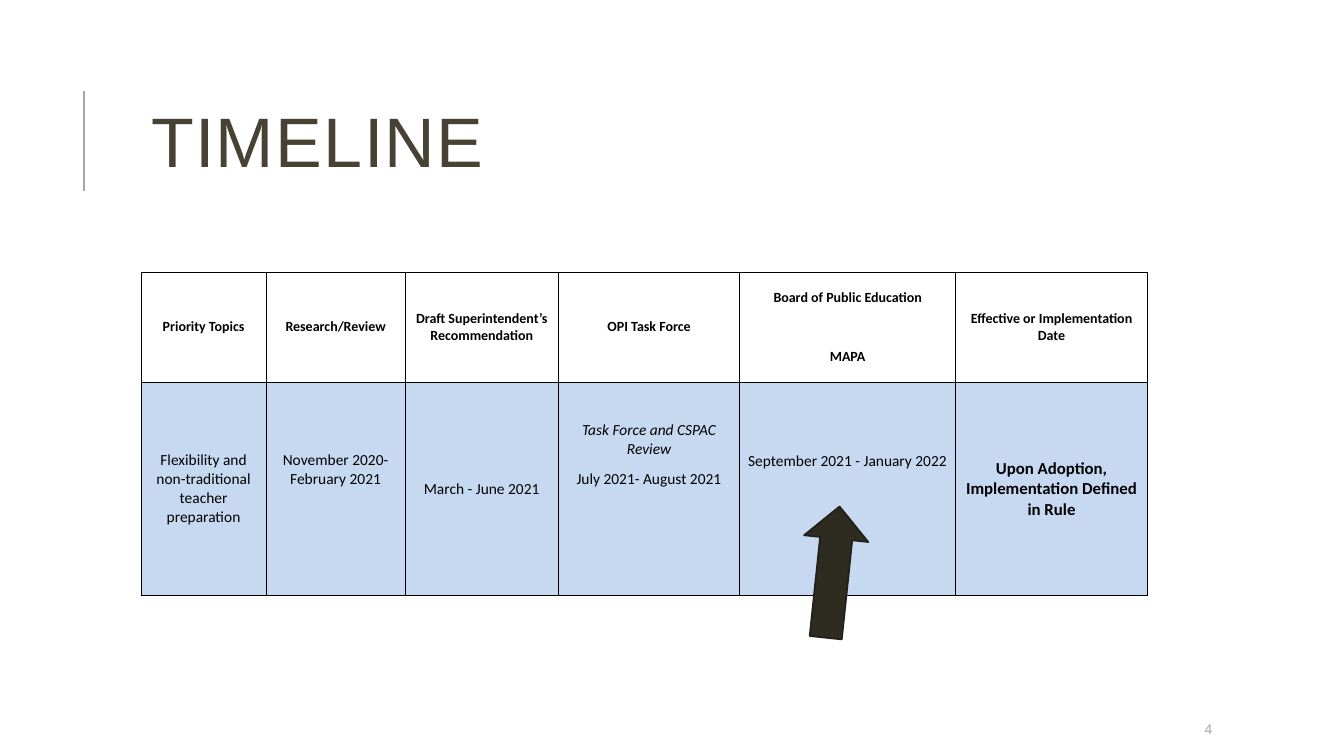
from dataclasses import dataclass

from lxml.etree import SubElement
from pptx import Presentation
from pptx.dml.color import RGBColor
from pptx.enum.shapes import MSO_CONNECTOR as Connector, MSO_SHAPE as Preset
from pptx.enum.text import MSO_ANCHOR as Anchor, PP_ALIGN as Align
from pptx.oxml import parse_xml
from pptx.oxml.ns import nsdecls, qn
from pptx.util import Inches, Pt


@dataclass(frozen=True)
class Theme:
    heading_font: str = "Arial"
    table_font: str = "Calibri"
    title_color: str = "474233"
    muted: str = "A6A6A6"
    ink: str = "000000"
    band: str = "C6D9F1"
    arrow: str = "2E2B21"
    arrow_line: str = "222018"
    title_size: float = 50
    number_size: float = 10
    header_size: float = 10
    body_size: float = 11
    outcome_size: float = 12


class SlideBuilder:
    """Places elements on a grid of 100 columns by 100 rows."""

    def __init__(self, presentation, theme):
        self.theme = theme
        self.column = presentation.slide_width / 100
        self.row = presentation.slide_height / 100
        self.slide = presentation.slides.add_slide(presentation.slide_layouts[6])

    def x(self, columns):
        return round(columns * self.column)

    def y(self, rows):
        return round(rows * self.row)

    def box(self, left, top, width, height):
        return self.x(left), self.y(top), self.x(width), self.y(height)

    def style(self, paragraph, font, size, color, bold=False, italic=False):
        paragraph.font.name = font
        paragraph.font.size = Pt(size)
        paragraph.font.color.rgb = RGBColor.from_string(color)
        paragraph.font.bold = bold
        paragraph.font.italic = italic

    def text(self, area, text, size, color, tracking=0, line_spacing=1.0):
        frame = self.slide.shapes.add_textbox(*self.box(*area)).text_frame
        frame.word_wrap = True
        frame.vertical_anchor = Anchor.MIDDLE
        paragraph = frame.paragraphs[0]
        run = paragraph.add_run()
        run.text = text
        paragraph.line_spacing = line_spacing
        self.style(paragraph, self.theme.heading_font, size, color)
        if tracking:
            run.font._element.set("spc", str(tracking * 100))

    def vertical_line(self, left, top, bottom, color, width):
        line = self.slide.shapes.add_connector(
            Connector.STRAIGHT, self.x(left), self.y(bottom), self.x(left), self.y(top))
        line.line.color.rgb = RGBColor.from_string(color)
        line.line.width = Pt(width)
        SubElement(line._element.spPr, qn("a:effectLst"))

    def shape(self, preset, area, fill, line, width, rotation=0):
        shape = self.slide.shapes.add_shape(preset, *self.box(*area))
        shape.shadow.inherit = False
        shape.rotation = rotation
        shape.fill.solid()
        shape.fill.fore_color.rgb = RGBColor.from_string(fill)
        shape.line.color.rgb = RGBColor.from_string(line)
        shape.line.width = Pt(width)

    def table(self, left, top, widths, heights):
        frame = self.slide.shapes.add_table(
            len(heights), len(widths), *self.box(left, top, sum(widths), sum(heights)))
        table = frame.table
        table.first_row = table.horz_banding = False
        for column, width in zip(table.columns, widths):
            column.width = self.x(width)
        for row, height in zip(table.rows, heights):
            row.height = self.y(height)
        return table

    def cell(self, cell, lines, size, fill=None, bold=False, italic_first=False,
             before=0, after=0, lift=0):
        """Fill one cell; lift is the bottom margin, in rows, that raises its text."""
        cell.vertical_anchor = Anchor.MIDDLE
        cell.margin_left = cell.margin_right = Inches(0.08)
        cell.margin_top = Inches(0.05)
        cell.margin_bottom = Inches(0.05) + self.y(lift)
        cell.text = "\n".join(lines)
        for index, paragraph in enumerate(cell.text_frame.paragraphs):
            paragraph.alignment = Align.CENTER
            if index:
                paragraph.space_before = Pt(before)
            if index < len(lines) - 1:
                paragraph.space_after = Pt(after)
            self.style(paragraph, self.theme.table_font, size, self.theme.ink,
                       bold, italic_first and index == 0)
        if fill:
            cell.fill.solid()
            cell.fill.fore_color.rgb = RGBColor.from_string(fill)
        else:
            cell.fill.background()
        properties = cell._tc.get_or_add_tcPr()
        for position, side in enumerate(("lnL", "lnR", "lnT", "lnB")):
            properties.insert(position, parse_xml(
                f'<a:{side} {nsdecls("a")} w="{Pt(0.5)}"><a:solidFill>'
                f'<a:srgbClr val="{self.theme.ink}"/></a:solidFill></a:{side}>'))


def main():
    presentation = Presentation()
    presentation.slide_width, presentation.slide_height = Inches(13.33), Inches(7.5)
    theme = Theme()
    builder = SlideBuilder(presentation, theme)

    # Title, accent line and slide number
    builder.vertical_line(6.25, 12, 25.33, theme.muted, 1.75)
    builder.text((10.5, 8.53, 79.75, 21.87), "TIMELINE", theme.title_size,
                 theme.title_color, tracking=1, line_spacing=0.8)
    builder.text((88.9, 94.4, 7.95, 4), "4", theme.number_size, theme.muted)

    # Timeline table
    headers = [
        ["Priority Topics"],
        ["Research/Review"],
        ["Draft Superintendent’s Recommendation"],
        ["OPI Task Force"],
        ["Board of Public Education", "MAPA"],
        ["Effective or Implementation Date"],
    ]
    stages = [
        (["Flexibility and non-traditional teacher preparation"], {}),
        (["November 2020- February 2021"], {"lift": 5.2}),
        (["March - June 2021"], {}),
        (["Task Force and CSPAC Review", "July 2021- August 2021"],
         {"italic_first": True, "after": 8, "lift": 9}),
        (["September 2021 - January 2022"], {"lift": 7.4}),
        (["Upon Adoption, Implementation Defined in Rule"],
         {"size": theme.outcome_size, "bold": True}),
    ]
    table = builder.table(10.5, 36, [9.3, 10.35, 11.4, 13.5, 16.05, 14.3], [14.55, 28.25])
    for index, (header, (lines, options)) in enumerate(zip(headers, stages)):
        builder.cell(table.cell(0, index), header, theme.header_size,
                     bold=True, before=24, after=6)
        builder.cell(table.cell(1, index), lines,
                     **{"size": theme.body_size, "fill": theme.band, **options})

    # Arrow to the current stage
    builder.shape(Preset.DOWN_ARROW, (59.55, 66.95, 4.8, 17.45), theme.arrow,
                  theme.arrow_line, 1.25, rotation=186)

    presentation.save("out.pptx")


if __name__ == "__main__":
    main()
